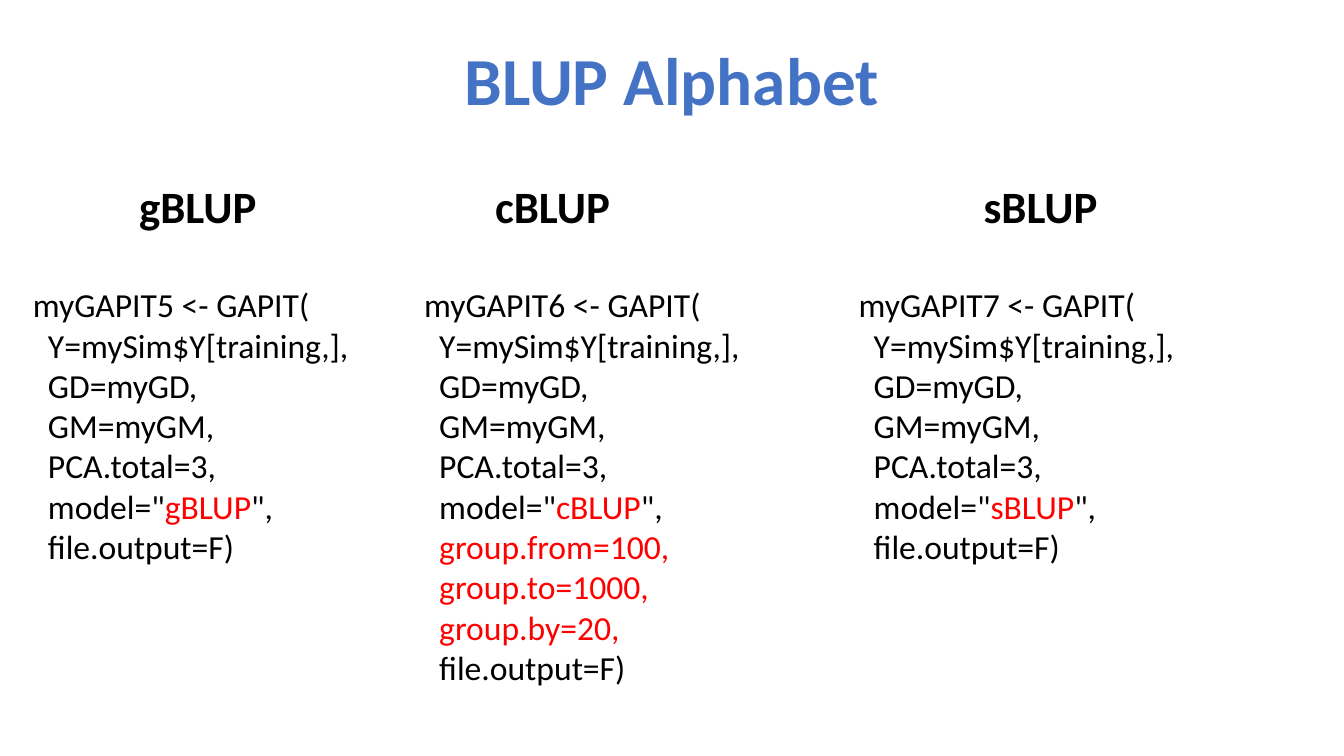
import pptx
import pptx.dml.color
import pptx.enum.shapes
import pptx.enum.text
import pptx.util

Cm = pptx.util.Cm


class SlideBuilder:
    FONT = "Calibri"
    COLORS = {"text": "000000", "accent": "FF0000", "title": "4472C4", "label": "FFFFFF"}

    def __init__(self, slide):
        self.slide = slide

    def color(self, name):
        return pptx.dml.color.RGBColor.from_string(self.COLORS[name])

    def style(self, p, size, color="text", bold=False):
        p.font.name = self.FONT
        p.font.size = pptx.util.Pt(size)
        p.font.bold = bold
        p.font.color.rgb = self.color(color)

    def frame(self, sp):
        tf = sp.text_frame
        tf.word_wrap = True
        tf.auto_size = pptx.enum.text.MSO_AUTO_SIZE.SHAPE_TO_FIT_TEXT
        return tf

    def heading(self, sp, text, size, color="text"):
        p = self.frame(sp).paragraphs[0]
        p.text = text
        p.alignment = pptx.enum.text.PP_ALIGN.CENTER
        self.style(p, size, color, bold=True)

    def title(self, text, left, top, width, height):
        sp = self.slide.shapes.add_textbox(Cm(left), Cm(top), Cm(width), Cm(height))
        self.heading(sp, text, 48, "title")

    def label(self, text, left, top, width, height):
        sp = self.slide.shapes.add_shape(
            pptx.enum.shapes.MSO_SHAPE.SNIP_ROUND_RECTANGLE,
            Cm(left), Cm(top), Cm(width), Cm(height))
        sp.shadow.inherit = False
        sp.fill.solid()
        sp.fill.fore_color.rgb = self.color("label")
        sp.line.fill.background()
        self.heading(sp, text, 32)

    def code(self, lines, left, top, width, height):
        sp = self.slide.shapes.add_textbox(Cm(left), Cm(top), Cm(width), Cm(height))
        tf = self.frame(sp)
        tf.margin_top = Cm(1.16)
        for i, line in enumerate(lines):
            p = tf.add_paragraph() if i else tf.paragraphs[0]
            self.style(p, 24)
            if i:
                p._p.get_or_add_pPr().set("marL", str(Cm(0.38)))
            for j, part in enumerate(line.split("|")):
                if part:
                    r = p.add_run()
                    r.text = part
                    if j % 2:
                        r.font.color.rgb = self.color("accent")


def call_lines(number, model, options):
    return [f"myGAPIT{number} <- GAPIT(", "Y=mySim$Y[training,],", "GD=myGD,",
            "GM=myGM,", "PCA.total=3,", f'model="|{model}|",', *options,
            "file.output=F)"]


def main():
    prs = pptx.Presentation()
    prs.slide_width, prs.slide_height = Cm(33.87), Cm(19.05)
    s = SlideBuilder(prs.slides.add_slide(prs.slide_layouts[6]))

    group_options = ["|group.from=100,|", "|group.to=1000,|", "|group.by=20,|"]
    models = [
        (5, "gBLUP", [], 0.58, 8.79, 2.64),
        (6, "cBLUP", group_options, 10.44, 9.91, 11.58),
        (7, "sBLUP", [], 21.39, 10.39, 23.88),
    ]
    for number, model, options, code_left, code_width, label_left in models:
        lines = call_lines(number, model, options)
        s.code(lines, code_left, 6, code_width, 1.28 + 1.03 * len(lines))
        s.label(model, label_left, 4.29, 4.75, 1.7)
    s.title("BLUP Alphabet", 1.35, 0.84, 31.17, 2.31)

    prs.save("out.pptx")


if __name__ == "__main__":
    main()
